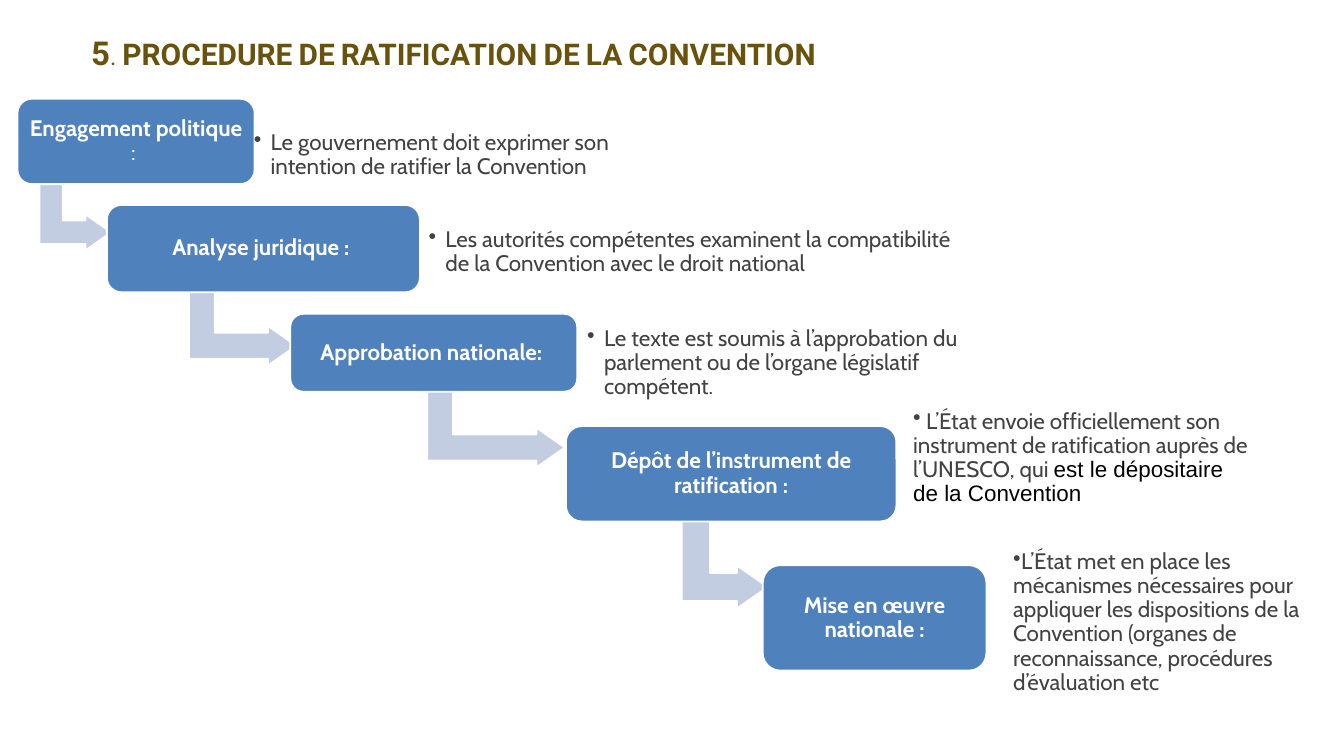
from dataclasses import dataclass
from typing import NamedTuple, Optional

from lxml.etree import SubElement
from pptx import Presentation
from pptx.dml.color import RGBColor as RGB
from pptx.enum.shapes import MSO_SHAPE as Shape
from pptx.enum.text import MSO_ANCHOR as Anchor, PP_ALIGN as Align
from pptx.oxml import parse_xml
from pptx.oxml.ns import nsdecls, qn
from pptx.util import Inches, Pt

WIDTH, HEIGHT = Inches(20), Inches(11.25)
COL, ROW = WIDTH / 20, HEIGHT / 11.25


@dataclass(frozen=True)
class Theme:
    title: str = "69520C"
    box: str = "4F81BD"
    arrow: str = "C2CDE1"
    white: str = "FFFFFF"
    body: str = "424242"
    black: str = "000000"
    title_font: str = "Roboto"
    body_font: str = "Cabin"
    accent_font: str = "Arial"
    number_size: int = 44
    title_size: int = 32
    body_size: int = 24
    edge: int = 2
    inset: float = 0.1
    line_spacing: float = 0.9
    arrow_adj: tuple = (0.328, 0.25, 0.358)


T = Theme()


class Cell(NamedTuple):
    col: float
    row: float
    cols: float
    rows: float

    def emu(self) -> list[int]:
        return [round(n * u) for n, u in zip(self, (COL, ROW, COL, ROW))]


class Run(NamedTuple):
    text: str
    size: int = T.body_size
    font: str = T.body_font
    color: str = T.body
    bold: bool = False
    title: bool = False


@dataclass(frozen=True)
class Step:
    box: Cell
    label: list[Run]
    note: Cell
    text: list[Run]
    hanging: bool = True
    arrow: Optional[Cell] = None


def label(text: str, bold: bool = True) -> Run:
    return Run(text, color=T.white, bold=bold)


def title(text: str, size: int, bold: bool = True) -> Run:
    return Run(text, size, T.title_font, T.title, bold, True)


STEPS = [
    Step(Cell(0.26, 1.47, 3.53, 1.27),
         [label("Engagement politique"), label(" : ", bold=False)],
         Cell(3.68, 1.47, 5.59, 1.69),
         [Run("Le gouvernement doit exprimer son intention de ratifier la Convention")],
         arrow=Cell(0.45, 2.52, 1.34, 1.07)),
    Step(Cell(1.59, 3.05, 4.66, 1.3),
         [label("Analyse juridique : ")],
         Cell(6.28, 3.15, 8.18, 1.21),
         [Run("Les autorités compétentes examinent la compatibilité de la Convention "
              "avec le droit national")],
         arrow=Cell(3.02, 4.05, 1.18, 1.6)),
    Step(Cell(4.32, 4.67, 4.27, 1.16),
         [label("Approbation nationale: ")],
         Cell(8.64, 4.56, 6.8, 1.69),
         [Run("Le texte est soumis à l’approbation du parlement ou de l’organe "
              "législatif compétent.")],
         arrow=Cell(6.79, 5.34, 1.18, 2.05)),
    Step(Cell(8.42, 6.34, 4.92, 1.42),
         [label("Dépôt de l’instrument de ratification :")],
         Cell(13.49, 6.07, 5.19, 1.5),
         [Run(" L’État envoie officiellement son instrument de ratification auprès de "
              "l’UNESCO, qui "),
          Run("est le dépositaire de la Convention", font=T.accent_font, color=T.black)],
         hanging=False, arrow=Cell(10.07, 7.7, 1.43, 1.28)),
    Step(Cell(11.35, 8.41, 3.33, 1.57),
         [label("Mise en œuvre nationale :")],
         Cell(14.98, 8.26, 4.64, 2.01),
         [Run("L’État met en place les mécanismes nécessaires pour appliquer les "
              "dispositions de la Convention (organes de reconnaissance, procédures "
              "d’évaluation etc")],
         hanging=False),
]


def add_bullet(p, hanging: bool) -> None:
    indent = Inches(0.25) if hanging else 0
    p.level = int(hanging)
    pPr = p._p.get_or_add_pPr()
    pPr.set("marL", str(indent))
    pPr.set("indent", str(-indent))
    SubElement(pPr, qn("a:buChar")).set("char", "•")


def style_title(r) -> None:
    rPr = r._r.get_or_add_rPr()
    rPr.set("cap", "small")
    rPr.find(qn("a:solidFill")).addnext(parse_xml(
        f'<a:effectLst {nsdecls("a")}><a:outerShdw blurRad="38100" dist="38100" '
        'dir="2700000"><a:srgbClr val="000000"><a:alpha val="43000"/></a:srgbClr>'
        '</a:outerShdw></a:effectLst>'))


def write(sp, runs: list[Run], *, align=Align.LEFT, spacing: float = 1.0,
          bullet: bool = False, hanging: bool = False) -> None:
    tf = sp.text_frame
    tf.word_wrap = True
    tf.vertical_anchor = Anchor.MIDDLE
    tf.margin_left = tf.margin_right = Inches(T.inset)
    tf.margin_top = tf.margin_bottom = Inches(T.inset)
    p = tf.paragraphs[0]
    p.alignment = align
    p.line_spacing = spacing
    if bullet:
        add_bullet(p, hanging)
    for run in runs:
        r = p.add_run()
        r.text = run.text
        r.font.size = Pt(run.size)
        r.font.name = run.font
        r.font.bold = run.bold
        r.font.color.rgb = RGB.from_string(run.color)
        if run.title:
            style_title(r)


def add_block(slide, kind, cell: Cell, fill: str):
    sp = slide.shapes.add_shape(kind, *cell.emu())
    sp.shadow.inherit = False
    sp.fill.solid()
    sp.fill.fore_color.rgb = RGB.from_string(fill)
    sp.line.color.rgb = RGB.from_string(T.white)
    sp.line.width = Pt(T.edge)
    return sp


def add_step(slide, step: Step) -> None:
    if step.arrow:
        arrow = add_block(slide, Shape.BENT_UP_ARROW, step.arrow, T.arrow)
        arrow.rotation = 90
        for i, value in enumerate(T.arrow_adj):
            arrow.adjustments[i] = value
    box = add_block(slide, Shape.ROUNDED_RECTANGLE, step.box, T.box)
    write(box, step.label, align=Align.CENTER, spacing=T.line_spacing)
    note = slide.shapes.add_textbox(*step.note.emu())
    write(note, step.text, spacing=T.line_spacing, bullet=True, hanging=step.hanging)


def main() -> None:
    prs = Presentation()
    prs.slide_width, prs.slide_height = WIDTH, HEIGHT
    slide = prs.slides.add_slide(prs.slide_layouts[6])
    heading = slide.shapes.add_textbox(*Cell(1.26, 0.55, 18.4, 0.36).emu())
    write(heading, [title("5", T.number_size),
                    title(". ", T.title_size, bold=False),
                    title("PROCEDURE DE RATIFICATION DE LA CONVENTION", T.title_size)])
    for step in STEPS:
        add_step(slide, step)
    prs.save("out.pptx")


if __name__ == "__main__":
    main()
